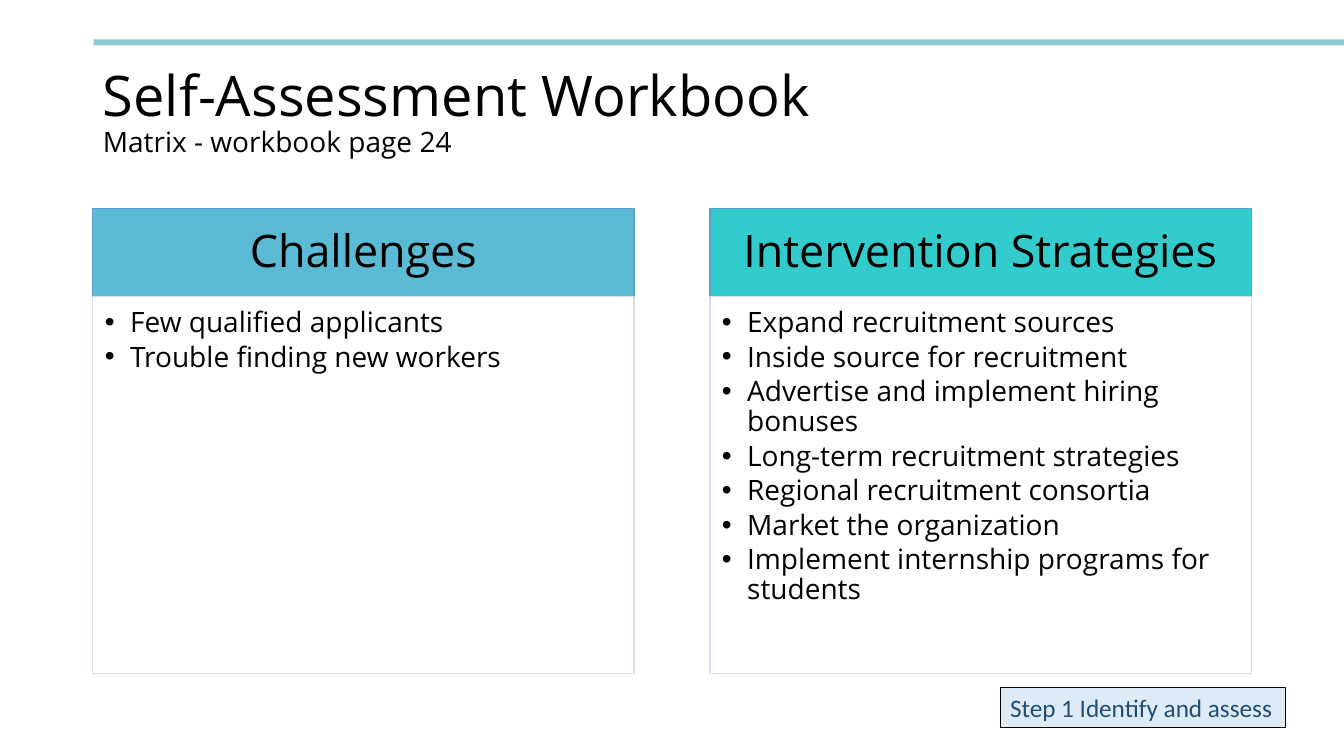
from dataclasses import dataclass

from lxml import etree
from pptx import Presentation
from pptx.dml.color import RGBColor
from pptx.enum import shapes, text
from pptx.oxml import ns
from pptx.util import Inches, Pt


@dataclass(frozen=True)
class Theme:
    face: str = "Open Sans"
    tagface: str = "Calibri"
    ink: str = "000000"
    rule: str = "8EC7D7"
    blue: str = "5BBBD5"
    teal: str = "33CCCC"
    edge: str = "5B9BD5"
    frame: str = "D2DEEF"
    pale: str = "DEEBF7"
    navy: str = "1F4E79"
    title: int = 40
    head: int = 32
    body: int = 20
    tag: int = 18


THEME = Theme()
PANELS = [
    ("Challenges", THEME.blue,
     ["Few qualified applicants", "Trouble finding new workers"]),
    ("Intervention Strategies", THEME.teal,
     ["Expand recruitment sources", "Inside source for recruitment",
      "Advertise and implement hiring bonuses", "Long-term recruitment strategies",
      "Regional recruitment consortia", "Market the organization",
      "Implement internship programs for students"]),
]


def apply(item, values):
    for name, value in values.items():
        setattr(item, name, value)


def place(shape, box):
    apply(shape, dict(zip(("left", "top", "width", "height"), map(Inches, box))))


def paint(shape, fill=None, line=None, width=1):
    if fill:
        shape.fill.solid()
        shape.fill.fore_color.rgb = RGBColor.from_string(fill)
    else:
        shape.fill.background()
    if line:
        shape.line.color.rgb = RGBColor.from_string(line)
        shape.line.width = Pt(width)
    else:
        shape.line.fill.background()


def inset(frame, left, top, right, bottom):
    apply(frame, {"margin_left": Inches(left), "margin_top": Inches(top),
                  "margin_right": Inches(right), "margin_bottom": Inches(bottom)})


def style(font, size, face=THEME.face, color=THEME.ink):
    apply(font, {"name": face, "size": Pt(size), "bold": False})
    font.color.rgb = RGBColor.from_string(color)


def bullet(para):
    props = para._p.get_or_add_pPr()
    props.set("marL", str(Inches(0.25)))
    props.set("indent", str(-Inches(0.25)))
    etree.SubElement(props, ns.qn("a:buFont")).set("typeface", "Arial")
    etree.SubElement(props, ns.qn("a:buChar")).set("char", "•")


def rule(slide, box):
    bar = slide.shapes.add_shape(shapes.MSO_SHAPE.RECTANGLE, *map(Inches, box))
    bar.shadow.inherit = False
    paint(bar, THEME.rule)


def heading(shape, box, title, note):
    place(shape, box)
    frame = shape.text_frame
    apply(frame, {"auto_size": text.MSO_AUTO_SIZE.NONE, "word_wrap": True,
                  "vertical_anchor": text.MSO_ANCHOR.MIDDLE})
    para = frame.paragraphs[0]
    apply(para, {"alignment": text.PP_ALIGN.LEFT, "line_spacing": 0.9})
    for words, size in ((title, THEME.title), (note, THEME.body)):
        if para.runs:
            para.add_line_break()
        run = para.add_run()
        run.text = words
        style(run.font, size)


def panel(head, body, box, label, fill, items):
    """Place a coloured heading above a framed list."""
    left, top, width, height = box
    band = 0.87
    place(head, (left, top, width, band))
    place(body, (left, top + band, width, height - band))
    paint(head, fill, THEME.edge)
    paint(body, line=THEME.frame)
    parts = (
        (head, [label], THEME.head, text.PP_ALIGN.CENTER, text.MSO_ANCHOR.MIDDLE,
         (0.25, 0.14, 0.25, 0.14)),
        (body, items, THEME.body, text.PP_ALIGN.LEFT, text.MSO_ANCHOR.TOP,
         (0.12, 0.12, 0.16, 0.17)),
    )
    for shape, lines, size, align, anchor, gaps in parts:
        frame = shape.text_frame
        frame.text = "\n".join(lines)
        apply(frame, {"auto_size": text.MSO_AUTO_SIZE.NONE, "word_wrap": True,
                      "vertical_anchor": anchor})
        inset(frame, *gaps)
        for para in frame.paragraphs:
            apply(para, {"alignment": align, "line_spacing": 0.9,
                         "space_before": Pt(0)})
            if shape is body:
                para.space_after = Pt(3)
                bullet(para)
            style(para.runs[0].font, size)


def tag(slide, box, words):
    shape = slide.shapes.add_shape(shapes.MSO_SHAPE.RECTANGLE, *map(Inches, box))
    shape.shadow.inherit = False
    paint(shape, THEME.pale, THEME.ink, 0.75)
    frame = shape.text_frame
    frame.text = words
    apply(frame, {"word_wrap": False, "vertical_anchor": text.MSO_ANCHOR.TOP,
                  "auto_size": text.MSO_AUTO_SIZE.SHAPE_TO_FIT_TEXT})
    para = frame.paragraphs[0]
    para.alignment = text.PP_ALIGN.LEFT
    style(para.runs[0].font, THEME.tag, THEME.tagface, THEME.navy)


def main():
    deck = Presentation()
    apply(deck, {"slide_width": Inches(13.33), "slide_height": Inches(7.5)})
    slide = deck.slides.add_slide(deck.slide_layouts.get_by_name("Comparison"))
    title, *slots = slide.placeholders
    rule(slide, (0.93, 0.39, 12.4, 0.06))
    heading(title, (0.92, 0.4, 11.5, 1.45),
            "Self-Assessment Workbook", "Matrix - workbook page 24")
    for i, (label, fill, items) in enumerate(PANELS):
        head, body = slots[2 * i:2 * i + 2]
        panel(head, body, (0.92 + 6.12 * i, 2.07, 5.37, 4.61), label, fill, items)
    tag(slide, (9.92, 6.82, 2.83, 0.4), "Step 1 Identify and assess")
    deck.save("out.pptx")


if __name__ == "__main__":
    main()
